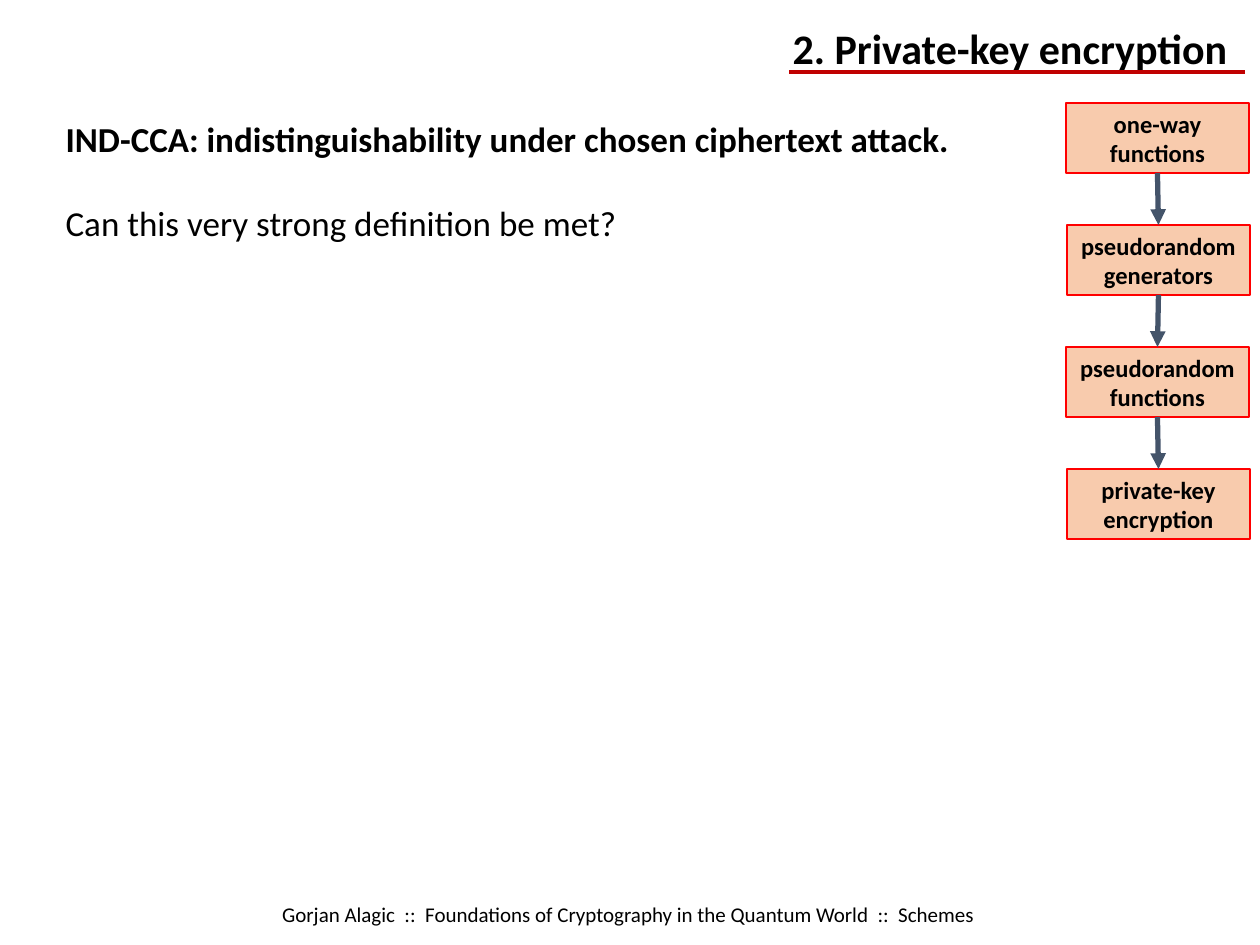
from dataclasses import dataclass

from lxml import etree
from pptx import Presentation
from pptx.dml.color import RGBColor
from pptx.enum.shapes import MSO_CONNECTOR, MSO_SHAPE
from pptx.enum.text import MSO_ANCHOR, MSO_AUTO_SIZE, PP_ALIGN
from pptx.oxml.ns import qn
from pptx.util import Emu, Pt

PX = 914400 / 126
FONT = "Calibri"
BLACK = RGBColor(0x00, 0x00, 0x00)
RED = RGBColor(0xFF, 0x00, 0x00)
DARK_RED = RGBColor(0xC0, 0x00, 0x00)
PEACH = RGBColor(0xF8, 0xCB, 0xAD)
SLATE = RGBColor(0x44, 0x54, 0x6A)
LEFT, CENTER = PP_ALIGN.LEFT, PP_ALIGN.CENTER
TOP, MIDDLE = MSO_ANCHOR.TOP, MSO_ANCHOR.MIDDLE
STRAIGHT, RECT = MSO_CONNECTOR.STRAIGHT, MSO_SHAPE.RECTANGLE
NO_AUTOFIT = MSO_AUTO_SIZE.NONE
BOTTOM_SITE, TOP_SITE = 2, 0

STEP_TOP, STEP_PITCH = 103, 122
STEP_W, STEP_H = 183, 70


@dataclass(frozen=True)
class Step:
    text: str
    x: int


STEPS = [
    Step("one-way functions", 1066),
    Step("pseudorandom generators", 1067),
    Step("pseudorandom functions", 1066),
    Step("private-key encryption", 1067),
]


def px(n: float) -> Emu:
    return Emu(round(n * PX))


def place(sp, x: int, y: int, w: int, h: int) -> None:
    sp.left, sp.top, sp.width, sp.height = px(x), px(y), px(w), px(h)


def add_text(p, text: str, *, size: int, bold: bool = False, align=LEFT, before: int = 0) -> None:
    p.alignment = align
    p.space_before = Pt(before)
    r = p.add_run()
    r.text = text
    r.font.name = FONT
    r.font.size = Pt(size)
    r.font.bold = bold
    r.font.color.rgb = BLACK


def set_frame(sp, *, anchor=TOP, wrap: bool = True):
    tf = sp.text_frame
    tf.auto_size = NO_AUTOFIT
    tf.word_wrap = wrap
    tf.vertical_anchor = anchor
    return tf


def remove_bullet(p) -> None:
    pPr = p._p.get_or_add_pPr()
    pPr.set("marL", "0")
    pPr.set("indent", "0")
    etree.SubElement(pPr, qn("a:buNone"))


def add_line(s, x1: int, y1: int, x2: int, y2: int, color: RGBColor, width: float):
    line = s.shapes.add_connector(STRAIGHT, px(x1), px(y1), px(x2), px(y2))
    line.line.color.rgb = color
    line.line.width = Pt(width)
    etree.SubElement(line._element.spPr, qn("a:effectLst"))
    return line


def add_step(s, step: Step, y: int):
    sp = s.shapes.add_shape(RECT, px(step.x), px(y), px(STEP_W), px(STEP_H))
    sp.shadow.inherit = False
    sp.fill.solid()
    sp.fill.fore_color.rgb = PEACH
    sp.line.color.rgb = RED
    sp.line.width = Pt(1)
    tf = set_frame(sp, anchor=MIDDLE)
    add_text(tf.paragraphs[0], step.text, size=14, bold=True, align=CENTER)
    return sp


def add_arrow(s, upper, lower) -> None:
    arrow = add_line(s, 0, 0, 0, 0, SLATE, 3)
    arrow.begin_connect(upper, BOTTOM_SITE)
    arrow.end_connect(lower, TOP_SITE)
    etree.SubElement(arrow.line._get_or_add_ln(), qn("a:tailEnd"), type="triangle")


def main() -> None:
    prs = Presentation()
    prs.slide_width, prs.slide_height = px(1260), px(945)
    s = prs.slides.add_slide(prs.slide_layouts[1])

    title = s.shapes.title
    place(title, 780, 16, 465, 63)
    tf = set_frame(title, wrap=False)
    add_text(tf.paragraphs[0], "2. Private-key encryption", size=24, bold=True)
    add_line(s, 1245, 72, 789, 72, DARK_RED, 2.25)

    body = s.placeholders[1]
    place(body, 53, 111, 1172, 649)
    tf = set_frame(body)
    heading, question = tf.paragraphs[0], tf.add_paragraph()
    add_text(heading, "IND-CCA: indistinguishability under chosen ciphertext attack.",
             size=20, bold=True)
    add_text(question, "Can this very strong definition be met?", size=20, before=24)
    for p in (heading, question):
        remove_bullet(p)

    footer = s.shapes.add_textbox(px(34), px(895), px(1189), px(38))
    tf = set_frame(footer)
    add_text(tf.paragraphs[0],
             "Gorjan Alagic  ::  Foundations of Cryptography in the Quantum World  ::  Schemes",
             size=12, align=CENTER)

    boxes = [add_step(s, step, STEP_TOP + i * STEP_PITCH) for i, step in enumerate(STEPS)]
    for upper, lower in zip(boxes, boxes[1:]):
        add_arrow(s, upper, lower)

    prs.save("out.pptx")


if __name__ == "__main__":
    main()
